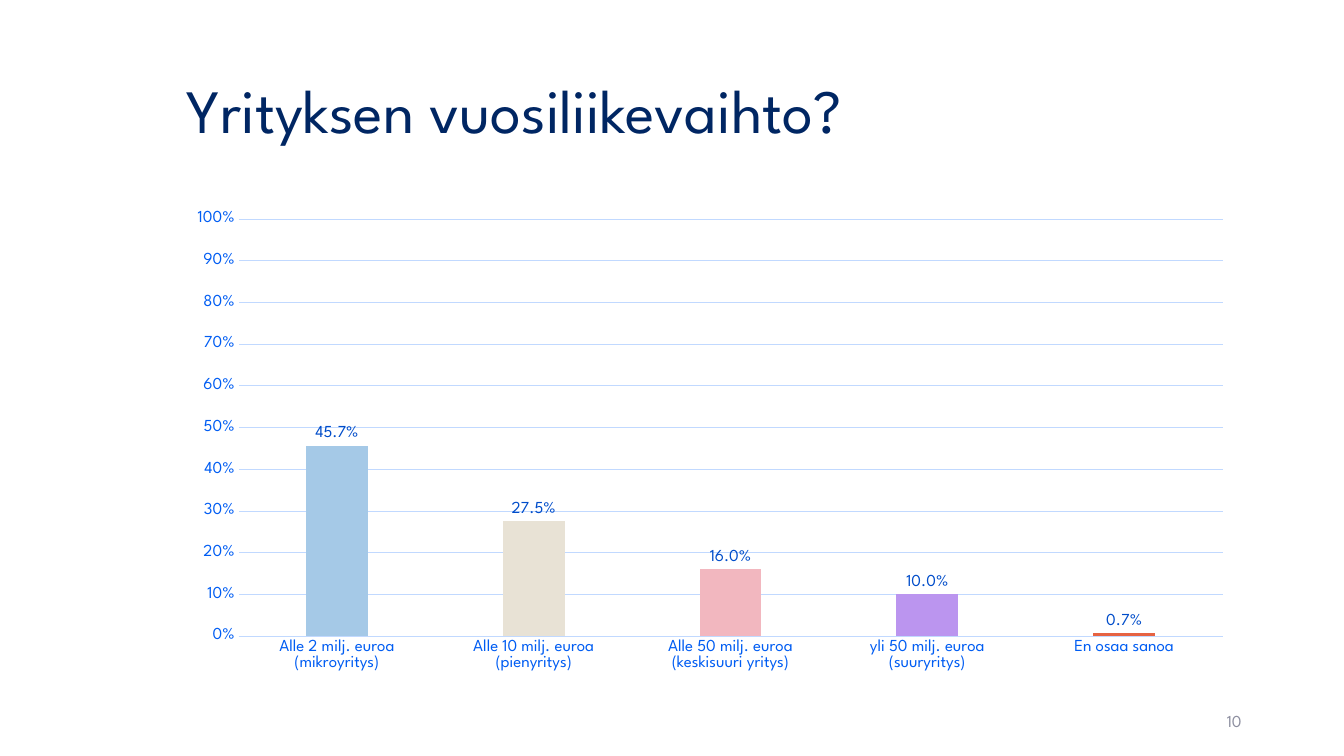
from pptx import Presentation
from pptx.chart.data import CategoryChartData
from pptx.dml.color import RGBColor
from pptx.enum.chart import XL_CHART_TYPE, XL_LABEL_POSITION, XL_TICK_MARK
from pptx.enum.text import MSO_ANCHOR, PP_ALIGN
from pptx.util import Pt

FONT = "League Spartan"
COLORS = {
    "title": "002663", "number": "8C8E9F", "axis": "005DF3",
    "grid": "C1D9FF", "label": "004DCA",
}
TITLE = "Yrityksen vuosiliikevaihto?"
PAGE_NUMBER = "10"
TURNOVER = [
    ("Alle 2 milj. euroa (mikroyritys)", 0.457, "A5C9E7"),
    ("Alle 10 milj. euroa (pienyritys)", 0.275, "E8E2D5"),
    ("Alle 50 milj. euroa (keskisuuri yritys)", 0.16, "F2B7BF"),
    ("yli 50 milj. euroa (suuryritys)", 0.1, "BB95EF"),
    ("En osaa sanoa", 0.007, "E66342"),
]
LEFT, WIDTH = 126, 762.5


def color(name):
    return RGBColor.from_string(COLORS[name])


def set_font(font, size, name):
    font.name = FONT
    font.size = Pt(size)
    font.bold = False
    font.color.rgb = color(name)


def set_line(line):
    line.color.rgb = color("grid")
    line.width = Pt(0.75)


def add_text(slide, text, box, size, name, align, anchor):
    shape = slide.shapes.add_textbox(*map(Pt, box))
    frame = shape.text_frame
    frame.word_wrap = True
    frame.vertical_anchor = anchor
    paragraph = frame.paragraphs[0]
    paragraph.text = text
    paragraph.alignment = align
    set_font(paragraph.font, size, name)
    return paragraph


def add_turnover_chart(slide):
    data = CategoryChartData(number_format="0.0%")
    data.categories = [category for category, _, _ in TURNOVER]
    data.add_series("Series 1", [value for _, value, _ in TURNOVER])
    chart = slide.shapes.add_chart(
        XL_CHART_TYPE.COLUMN_CLUSTERED, Pt(LEFT), Pt(144), Pt(WIDTH), Pt(342.7), data
    ).chart
    chart.has_legend = False
    chart.has_title = False
    set_font(chart.font, 10, "title")

    for axis in (chart.category_axis, chart.value_axis):
        axis.major_tick_mark = XL_TICK_MARK.NONE
        axis.minor_tick_mark = XL_TICK_MARK.NONE
        set_font(axis.tick_labels.font, 12, "axis")
    set_line(chart.category_axis.format.line)
    value_axis = chart.value_axis
    value_axis.minimum_scale, value_axis.maximum_scale = 0, 1
    value_axis.major_unit = 0.1
    value_axis.tick_labels.number_format = "0%"
    value_axis.tick_labels.number_format_is_linked = False
    value_axis.format.line.fill.background()
    set_line(value_axis.major_gridlines.format.line)

    plot = chart.plots[0]
    plot.gap_width, plot.overlap = 219, -27
    plot.vary_by_categories = False
    plot.has_data_labels = True
    labels = plot.data_labels
    labels.show_value = True
    labels.number_format = "0.0%"
    labels.number_format_is_linked = False
    labels.position = XL_LABEL_POSITION.OUTSIDE_END
    set_font(labels.font, 12, "label")
    for index, (_, _, bar_color) in enumerate(TURNOVER):
        fill = plot.series[0].points[index].format.fill
        fill.solid()
        fill.fore_color.rgb = RGBColor.from_string(bar_color)


def main():
    """Build the slide on company turnover."""
    presentation = Presentation()
    presentation.slide_width, presentation.slide_height = Pt(960), Pt(540)
    slide = presentation.slides.add_slide(presentation.slide_layouts[6])
    title = add_text(slide, TITLE, (LEFT, 28.8, WIDTH, 104.4), 44, "title",
                     PP_ALIGN.LEFT, MSO_ANCHOR.MIDDLE)
    title.line_spacing = 0.9
    add_text(slide, PAGE_NUMBER, (678, 500.5, 216, 28.8), 12, "number",
             PP_ALIGN.RIGHT, MSO_ANCHOR.MIDDLE)
    add_turnover_chart(slide)
    presentation.save("out.pptx")


if __name__ == "__main__":
    main()
